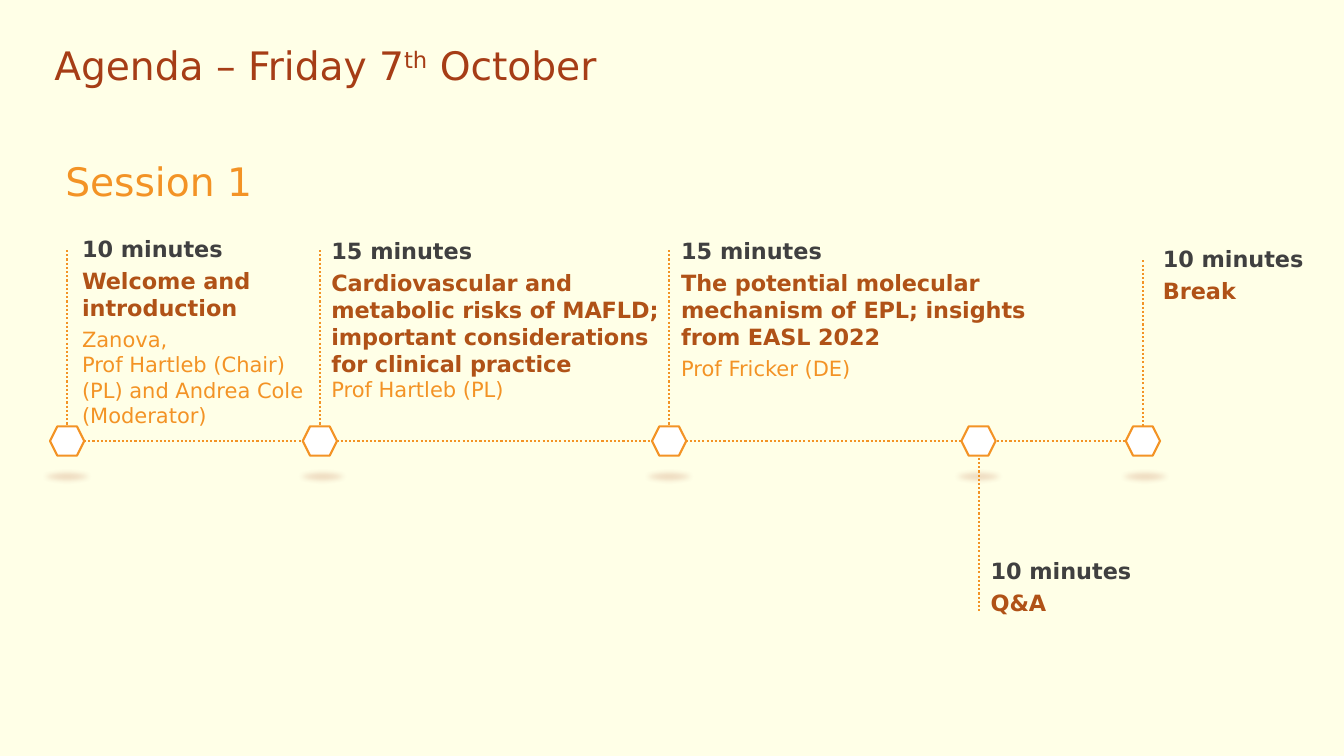
from dataclasses import dataclass

from lxml import etree
from pptx import Presentation
from pptx.dml.color import RGBColor
from pptx.enum import dml, shapes, text
from pptx.oxml.ns import qn
from pptx.util import Pt


@dataclass(frozen=True)
class Theme:
    font: str = "DejaVu Sans"
    background: str = "FFFFE7"
    heading: str = "A63D16"
    accent: str = "F39325"
    duration: str = "404040"
    topic: str = "B05217"
    marker: str = "FFFFFF"
    heading_size: float = 28
    topic_size: float = 16
    speaker_size: float = 15
    line_width: float = 1.5


THEME = Theme()
AXIS_Y = 315
MARKER_WIDTH, MARKER_HEIGHT = 24.5, 20.9
SHADOW_TOP, SHADOW_WIDTH, SHADOW_HEIGHT = 334.1, 49, 13

DURATION = dict(size=THEME.topic_size, color=THEME.duration, bold=True)
TOPIC = dict(size=THEME.topic_size, color=THEME.topic, bold=True)
TIGHT_TOPIC = dict(TOPIC, tracking=-5)
SPEAKER = dict(size=THEME.speaker_size, color=THEME.accent)
HEADING = dict(size=THEME.heading_size, color=THEME.heading)
SESSION = dict(size=THEME.heading_size, color=THEME.accent)

# Marker centre, shadow centre, stem (top, bottom), card (left, top, width,
# height) and the card's paragraphs, each a list of (text, format) spans.
STOPS = [
    (48, 48, (178.6, AXIS_Y), (50, 164.2, 179.3, 146.2), [
        [("10 minutes", DURATION)],
        [("Welcome and introduction", TOPIC)],
        [("Zanova,\nProf Hartleb (Chair) (PL) and Andrea Cole (Moderator)", SPEAKER)],
    ]),
    (228.5, 230.4, (178.6, AXIS_Y), (228.2, 165.6, 255, 127.4), [
        [("15 minutes", DURATION)],
        [("Cardiovascular and metabolic risks of MAFLD; important "
          "considerations for clinical practice\n", TIGHT_TOPIC),
         ("Prof Hartleb (PL)", SPEAKER)],
    ]),
    (478, 478, (178.6, AXIS_Y), (478, 165.6, 298.8, 112.3), [
        [("15 minutes", DURATION)],
        [("The potential molecular mechanism of EPL; insights from EASL 2022",
          TIGHT_TOPIC)],
        [("Prof Fricker (DE)", SPEAKER)],
    ]),
    (699, 699, (AXIS_Y, 438), (699, 394.3, 260, 50.4), [
        [("10 minutes", DURATION)],
        [("Q&A", TOPIC)],
    ]),
    (816.4, 817.9, (186, AXIS_Y), (822, 171.4, 137, 50.4), [
        [("10 minutes", DURATION)],
        [("Break", TOPIC)],
    ]),
]


def rgb(color):
    return RGBColor.from_string(color)


def add_text(para, content, *, size, color, bold=False, tracking=0, baseline=0):
    """Append formatted text; each newline becomes a line break."""
    for index, line in enumerate(content.split("\n")):
        if index:
            para.add_line_break()
        if not line:
            continue
        span = para.add_run()
        span.text = line
        span.font.name = THEME.font
        span.font.size = Pt(size)
        span.font.bold = bold
        span.font.color.rgb = rgb(color)
        if tracking:
            span.font._element.set("spc", str(tracking))
        if baseline:
            span.font._element.set("baseline", str(baseline))


def add_text_box(page, bounds, paragraphs, *, inset=7.2, anchor=text.MSO_ANCHOR.TOP,
                 space_after=0, line_spacing=1.0):
    box = page.shapes.add_textbox(*map(Pt, bounds))
    frame = box.text_frame
    frame.word_wrap = True
    frame.auto_size = text.MSO_AUTO_SIZE.SHAPE_TO_FIT_TEXT
    frame.vertical_anchor = anchor
    frame.margin_left = Pt(inset)
    for index, spans in enumerate(paragraphs):
        para = frame.add_paragraph() if index else frame.paragraphs[0]
        para.space_after = Pt(space_after)
        para.line_spacing = line_spacing
        for content, style in spans:
            add_text(para, content, **style)


def add_heading(page, bounds, spans):
    add_text_box(page, bounds, [spans], anchor=text.MSO_ANCHOR.MIDDLE, line_spacing=0.85)


def add_dotted_line(page, *ends):
    line = page.shapes.add_connector(shapes.MSO_CONNECTOR.STRAIGHT, *map(Pt, ends))
    line.line.color.rgb = rgb(THEME.accent)
    line.line.width = Pt(THEME.line_width)
    line.line.dash_style = dml.MSO_LINE.ROUND_DOT
    etree.SubElement(line._element.spPr, qn("a:effectLst"))


def add_centred_shape(page, kind, center, top, width, height, color):
    shape = page.shapes.add_shape(kind, Pt(center - width / 2), Pt(top), Pt(width), Pt(height))
    shape.shadow.inherit = False
    shape.fill.solid()
    shape.fill.fore_color.rgb = rgb(color)
    shape.line.fill.background()
    return shape


def add_marker(page, center):
    marker = add_centred_shape(page, shapes.MSO_SHAPE.HEXAGON, center,
                               AXIS_Y - MARKER_HEIGHT / 2, MARKER_WIDTH, MARKER_HEIGHT,
                               THEME.marker)
    marker.line.color.rgb = rgb(THEME.accent)
    marker.line.width = Pt(THEME.line_width)


def add_soft_shadow(page, center):
    """Draw a blurred, mostly transparent ellipse below a marker."""
    shadow = add_centred_shape(page, shapes.MSO_SHAPE.OVAL, center, SHADOW_TOP,
                               SHADOW_WIDTH, SHADOW_HEIGHT, THEME.heading)
    properties = shadow._element.spPr
    color = properties.find(f"{qn('a:solidFill')}/{qn('a:srgbClr')}")
    etree.SubElement(color, qn("a:alpha"), val="20000")
    effects = properties.find(qn("a:effectLst"))
    etree.SubElement(effects, qn("a:softEdge"), rad=str(Pt(4)))


def add_stop(page, center, shadow_center, stem, card, paragraphs):
    add_soft_shadow(page, shadow_center)
    add_dotted_line(page, center, stem[0], center, stem[1])
    add_marker(page, center)
    add_text_box(page, card, paragraphs, inset=8.6, space_after=4)


def main():
    deck = Presentation()
    deck.slide_width, deck.slide_height = Pt(960), Pt(540)
    page = deck.slides.add_slide(deck.slide_layouts[6])
    page.background.fill.solid()
    page.background.fill.fore_color.rgb = rgb(THEME.background)

    add_heading(page, (31.7, 31, 799, 36), [
        ("Agenda – Friday 7", HEADING),
        ("th", dict(HEADING, baseline=30000)),
        (" October", HEADING),
    ])
    add_heading(page, (39.6, 113.8, 895, 36), [("Session 1", SESSION)])
    add_dotted_line(page, STOPS[0][0], AXIS_Y, STOPS[-1][0], AXIS_Y)
    for stop in STOPS:
        add_stop(page, *stop)
    deck.save("out.pptx")


if __name__ == "__main__":
    main()
